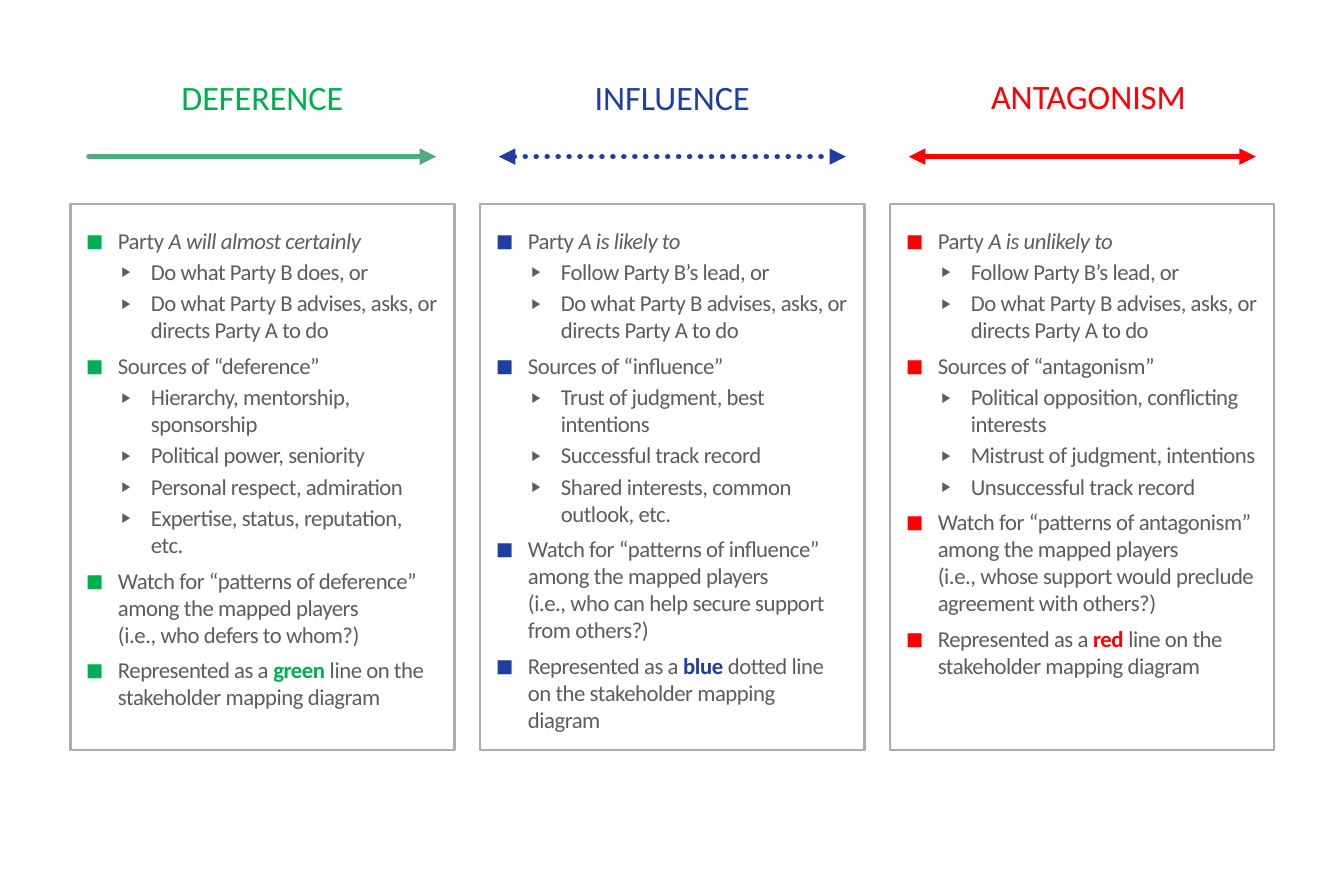
from dataclasses import dataclass

from lxml import etree
from pptx import Presentation
from pptx.dml.color import RGBColor
from pptx.enum.dml import MSO_LINE
from pptx.enum.shapes import MSO_CONNECTOR
from pptx.enum.text import MSO_ANCHOR, MSO_AUTO_SIZE, PP_ALIGN
from pptx.oxml.ns import qn
from pptx.util import Cm, Pt

CENTER, LEFT = PP_ALIGN.CENTER, PP_ALIGN.LEFT
MIDDLE, TOP = MSO_ANCHOR.MIDDLE, MSO_ANCHOR.TOP
NO_AUTOFIT = MSO_AUTO_SIZE.NONE
STRAIGHT = MSO_CONNECTOR.STRAIGHT
SOLID, DOTTED = MSO_LINE.SOLID, MSO_LINE.ROUND_DOT

FONT = "Calibri"
GREY, BORDER = "5F5C5F", "A8ADB4"
COMPARISON_LAYOUT = 4
LIST_PLACEHOLDERS = (1, 2, 3)
COLUMN_LEFT, COLUMN_PITCH, COLUMN_WIDTH = 2.26, 13.17, 12.34
HEADING_TOP, HEADING_HEIGHT = 1.24, 3.76
ARROW_TOP, ARROW_INSET, ARROW_WIDTH = 5.03, 0.6, 11.15
LIST_TOP, LIST_HEIGHT = 6.55, 17.53


@dataclass
class Relation:
    name: str
    color: str
    arrow_color: str
    likelihood: str
    first_action: str
    sources: tuple
    question: str
    color_word: str
    line_word: str = " line"
    two_way: bool = True
    dash: int = SOLID
    heading_shift: tuple = (0, 0)


RELATIONS = (
    Relation("deference", "00B050", "4CAD7F", "A will almost certainly",
             "Do what Party B does, or",
             ("Hierarchy, mentorship, sponsorship", "Political power, seniority",
              "Personal respect, admiration", "Expertise, status, reputation, etc."),
             "(i.e., who defers to whom?)", "green", two_way=False),
    Relation("influence", "1F3EA1", "1F3EA1", "A is likely to",
             "Follow Party B’s lead, or",
             ("Trust of judgment, best intentions", "Successful track record",
              "Shared interests, common outlook, etc."),
             "(i.e., who can help secure support from others?)", "blue",
             line_word=" dotted line", dash=DOTTED),
    Relation("antagonism", "FF0000", "FF0000", "A is unlikely to",
             "Follow Party B’s lead, or",
             ("Political opposition, conflicting interests",
              "Mistrust of judgment, intentions", "Unsuccessful track record"),
             "(i.e., whose support would preclude agreement with others?)", "red",
             heading_shift=(0.2, -0.05)),
)


def rgb(color):
    return RGBColor.from_string(color)


def add_text(paragraph, text, size=20.7, color=GREY, bold=False, italic=False, spacing=-0.4):
    for number, line in enumerate(text.split("\n")):
        if number:
            paragraph.add_line_break()
        run = paragraph.add_run()
        run.text = line
        run.font.name = FONT
        run.font.size = Pt(size)
        run.font.bold = bold
        run.font.italic = italic
        run.font.color.rgb = rgb(color)
        run.font._element.set("spc", str(round(spacing * 100)))


def add_bullet(paragraph, symbol, color, percent, indent, hanging):
    properties = paragraph._p.get_or_add_pPr()
    properties.set("marL", str(Cm(indent)))
    properties.set("indent", str(-Cm(hanging)))
    bullet_color = etree.SubElement(properties, qn("a:buClr"))
    etree.SubElement(bullet_color, qn("a:srgbClr"), val=color)
    etree.SubElement(properties, qn("a:buSzPct"), val=str(percent * 1000))
    etree.SubElement(properties, qn("a:buFont"), typeface=FONT)
    etree.SubElement(properties, qn("a:buChar"), char=symbol)


def add_heading(slide, relation, left, top, width, height):
    shift_x, shift_y = relation.heading_shift
    heading = slide.shapes.add_textbox(Cm(left + shift_x), Cm(top + shift_y),
                                       Cm(width), Cm(height))
    frame = heading.text_frame
    frame.word_wrap = True
    frame.vertical_anchor = MIDDLE
    frame.paragraphs[0].alignment = CENTER
    add_text(frame.paragraphs[0], relation.name.upper(), size=31.1,
             color=relation.color, spacing=0)


def add_arrow(slide, relation, left, top, width):
    arrow = slide.shapes.add_connector(STRAIGHT, Cm(left), Cm(top), Cm(left + width), Cm(top))
    arrow.line.color.rgb = rgb(relation.arrow_color)
    arrow.line.width = Pt(5)
    arrow.line.dash_style = relation.dash
    outline = arrow.line._get_or_add_ln()
    outline.set("cap", "rnd")
    if relation.two_way:
        etree.SubElement(outline, qn("a:headEnd"), type="triangle")
    etree.SubElement(outline, qn("a:tailEnd"), type="triangle")
    etree.SubElement(arrow._element.spPr, qn("a:effectLst"))


def list_points(relation):
    name = relation.name
    actions = (relation.first_action, "Do what Party B advises, asks, or directs Party A to do")
    return [
        (0, [("Party ", {}), (relation.likelihood, {"italic": True})]),
        *((1, [(action, {})]) for action in actions),
        (0, [(f"Sources of “{name}”", {})]),
        *((1, [(source, {})]) for source in relation.sources),
        (0, [(f"Watch for “patterns of {name}” among the mapped players\n{relation.question}", {})]),
        (0, [("Represented as a ", {}),
             (relation.color_word, {"color": relation.color, "bold": True}),
             (f"{relation.line_word} on the stakeholder mapping diagram", {})]),
    ]


def add_list(panel, relation, left, top, width, height):
    panel.left, panel.top, panel.width, panel.height = Cm(left), Cm(top), Cm(width), Cm(height)
    panel.line.color.rgb = rgb(BORDER)
    panel.line.width = Pt(2.25)
    frame = panel.text_frame
    frame.word_wrap = True
    frame.auto_size = NO_AUTOFIT
    frame.vertical_anchor = TOP
    frame.margin_left = frame.margin_right = Cm(0.51)
    frame.margin_top = frame.margin_bottom = Cm(0.76)
    points = list_points(relation)
    for number, (level, parts) in enumerate(points):
        paragraph = frame.add_paragraph() if number else frame.paragraphs[0]
        next_level = points[number + 1][0] if number + 1 < len(points) else 0
        paragraph.level = level
        paragraph.alignment = LEFT
        paragraph.line_spacing = 0.99
        paragraph.space_before = Pt(0)
        paragraph.space_after = Pt(3.9 if next_level else 7.8)
        if level:
            add_bullet(paragraph, "▶", GREY, 60, 2.08, 0.94)
        else:
            add_bullet(paragraph, "■", relation.color, 80, 1.02, 1.02)
        for text, style in parts:
            add_text(paragraph, text, **style)


def add_column(slide, panel, relation, left):
    add_list(panel, relation, left, LIST_TOP, COLUMN_WIDTH, LIST_HEIGHT)
    add_heading(slide, relation, left, HEADING_TOP, COLUMN_WIDTH, HEADING_HEIGHT)
    add_arrow(slide, relation, left + ARROW_INSET, ARROW_TOP, ARROW_WIDTH)


def main():
    deck = Presentation()
    deck.slide_width, deck.slide_height = Cm(43.18), Cm(27.94)
    slide = deck.slides.add_slide(deck.slide_layouts[COMPARISON_LAYOUT])
    panels = {panel.placeholder_format.idx: panel for panel in slide.placeholders}
    for number, (key, relation) in enumerate(zip(LIST_PLACEHOLDERS, RELATIONS)):
        add_column(slide, panels.pop(key), relation, COLUMN_LEFT + number * COLUMN_PITCH)
    for unused in panels.values():
        unused._element.getparent().remove(unused._element)
    deck.save("out.pptx")


if __name__ == "__main__":
    main()
